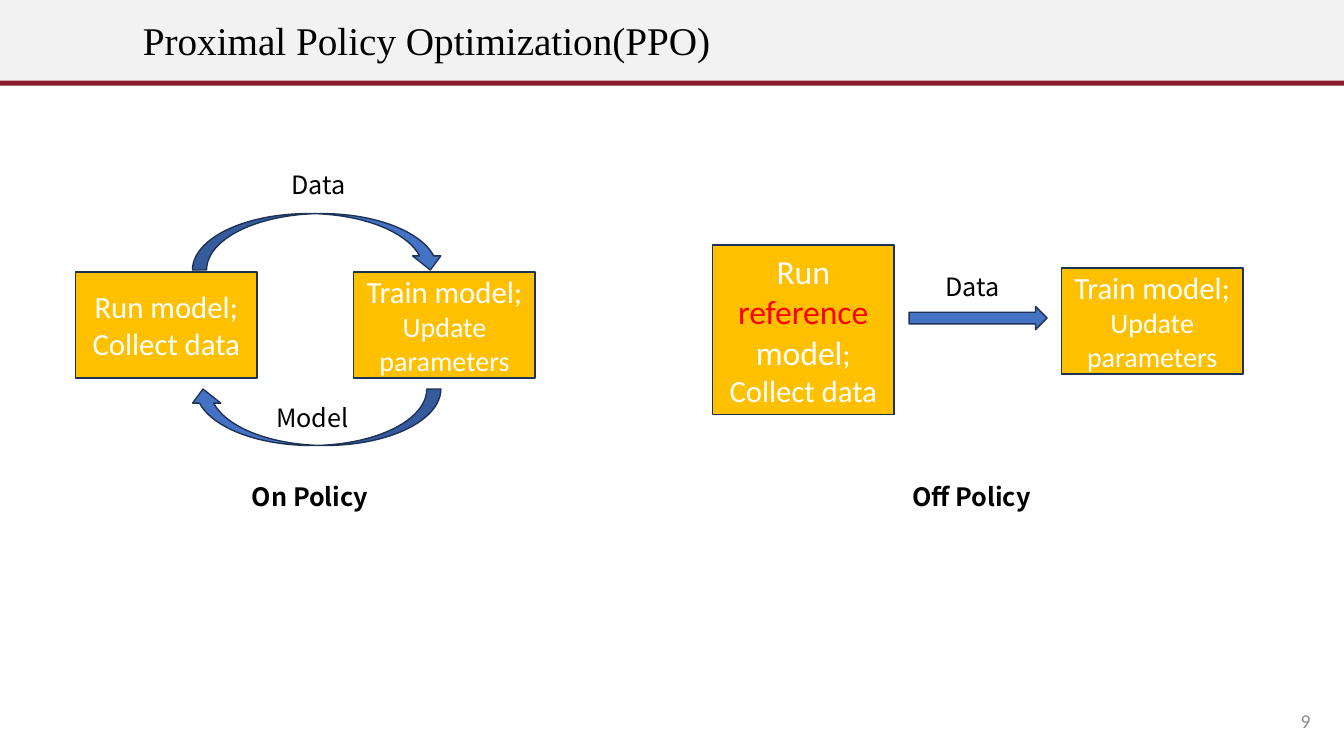
from pptx import Presentation
from pptx.dml.color import RGBColor
from pptx.enum.shapes import MSO_SHAPE
from pptx.enum.text import MSO_ANCHOR, PP_ALIGN
from pptx.util import Pt

RECTANGLE = MSO_SHAPE.RECTANGLE
CURVED_ARROW = MSO_SHAPE.CURVED_DOWN_ARROW
RIGHT_ARROW = MSO_SHAPE.RIGHT_ARROW
MIDDLE, TOP = MSO_ANCHOR.MIDDLE, MSO_ANCHOR.TOP
LEFT, CENTER, RIGHT = PP_ALIGN.LEFT, PP_ALIGN.CENTER, PP_ALIGN.RIGHT

COLORS = {
    "header": "F2F2F2",
    "rule": "881C2B",
    "step": "FFC000",
    "arrow": "4472C4",
    "outline": "1E3256",
    "text": "000000",
    "step text": "FFFFFF",
    "highlight": "FF0000",
    "page number": "8C8C8C",
}
BODY_FONT = "Calibri"
LABEL_FONT = "Noto Sans CJK SC"
TITLE_FONT = "Times New Roman"

SLIDE_WIDTH, SLIDE_HEIGHT = 960, 540
STEP_WIDTH, STEP_HEIGHT = 129.6, 75.6
LABEL_WIDTH, LABEL_HEIGHT = 103.7, 28.8
LOOP_WIDTH, LOOP_HEIGHT = 180, 40.3
CAPTION_TOP = 340.6

# Each step is a list of paragraphs; each paragraph a list of (text, size, color).
COLLECT = [[("Run model;", 22, "step text")], [("Collect data", 22, "step text")]]
TRAIN = [[("Train model;", 22, "step text")], [("Update parameters", 20, "step text")]]
COLLECT_REFERENCE = [
    [
        ("Run ", 24, "step text"),
        ("reference", 24, "highlight"),
        (" model", 24, "step text"),
        (";", 22, "step text"),
    ],
    [("Collect data", 22, "step text")],
]


def color(name):
    return RGBColor.from_string(COLORS[name])


def add_block(page, kind, left, top, width, height, fill, outline=True):
    """Add a filled preset shape, outlined unless told otherwise."""
    block = page.shapes.add_shape(kind, Pt(left), Pt(top), Pt(width), Pt(height))
    block.shadow.inherit = False
    block.fill.solid()
    block.fill.fore_color.rgb = color(fill)
    if outline:
        block.line.color.rgb = color("outline")
        block.line.width = Pt(1)
    else:
        block.line.fill.background()
    return block


def add_text(page, text, left, top, width, height, size, font,
             ink="text", bold=False, align=LEFT, anchor=TOP):
    box = page.shapes.add_textbox(Pt(left), Pt(top), Pt(width), Pt(height))
    frame = box.text_frame
    frame.word_wrap = True
    frame.vertical_anchor = anchor
    para = frame.paragraphs[0]
    para.text = text
    para.alignment = align
    para.font.name = font
    para.font.size = Pt(size)
    para.font.bold = bold
    para.font.color.rgb = color(ink)
    return box


def add_label(page, text, left, top, bold=False):
    add_text(page, text, left, top, LABEL_WIDTH, LABEL_HEIGHT, 18, LABEL_FONT, bold=bold)


def add_step(page, lines, left, top, height=STEP_HEIGHT):
    frame = add_block(page, RECTANGLE, left, top, STEP_WIDTH, height, "step").text_frame
    frame.word_wrap = True
    frame.vertical_anchor = MIDDLE
    for index, spans in enumerate(lines):
        para = frame.add_paragraph() if index else frame.paragraphs[0]
        para.alignment = CENTER
        para.font.name = BODY_FONT
        for text, size, ink in spans:
            span = para.add_run()
            span.text = text
            span.font.size = Pt(size)
            span.font.color.rgb = color(ink)


def add_frame(page):
    """Add the header band with its title and rule, and the page number."""
    add_block(page, RECTANGLE, 0, 0, SLIDE_WIDTH, 57.6, "header", outline=False)
    add_block(page, RECTANGLE, 0, 57.6, SLIDE_WIDTH, 3.6, "rule", outline=False)
    title = add_text(page, "Proximal Policy Optimization(PPO)", 95, 0, 828, 61.2,
                     28, TITLE_FONT, anchor=MIDDLE)
    title.text_frame.paragraphs[0].line_spacing = 0.9
    add_text(page, "9", 727.2, 500.4, 216, 28.8, 14, BODY_FONT,
             ink="page number", align=RIGHT, anchor=MIDDLE)


def add_on_policy(page):
    add_step(page, COLLECT, 54, 194.4)
    add_step(page, TRAIN, 252.7, 194.4)
    add_block(page, CURVED_ARROW, 137.5, 152.6, LOOP_WIDTH, LOOP_HEIGHT, "arrow")
    way_back = add_block(page, CURVED_ARROW, 134.9, 277.9, LOOP_WIDTH, LOOP_HEIGHT, "arrow")
    way_back.rotation = 180
    add_label(page, "Data", 200.9, 117.4)
    add_label(page, "Model", 190.1, 283.7)
    add_label(page, "On Policy", 172.8, CAPTION_TOP, bold=True)


def add_off_policy(page):
    add_step(page, COLLECT_REFERENCE, 509, 175, height=121)
    add_step(page, TRAIN, 758.2, 191.5)
    add_block(page, RIGHT_ARROW, 649.4, 218.9, 98.6, 16.6, "arrow")
    add_label(page, "Data", 668.2, 190.1)
    add_label(page, "Off Policy", 644.4, CAPTION_TOP, bold=True)


def main():
    deck = Presentation()
    deck.slide_width, deck.slide_height = Pt(SLIDE_WIDTH), Pt(SLIDE_HEIGHT)
    page = deck.slides.add_slide(deck.slide_layouts[6])
    add_frame(page)
    add_on_policy(page)
    add_off_policy(page)
    deck.save("out.pptx")


if __name__ == "__main__":
    main()
